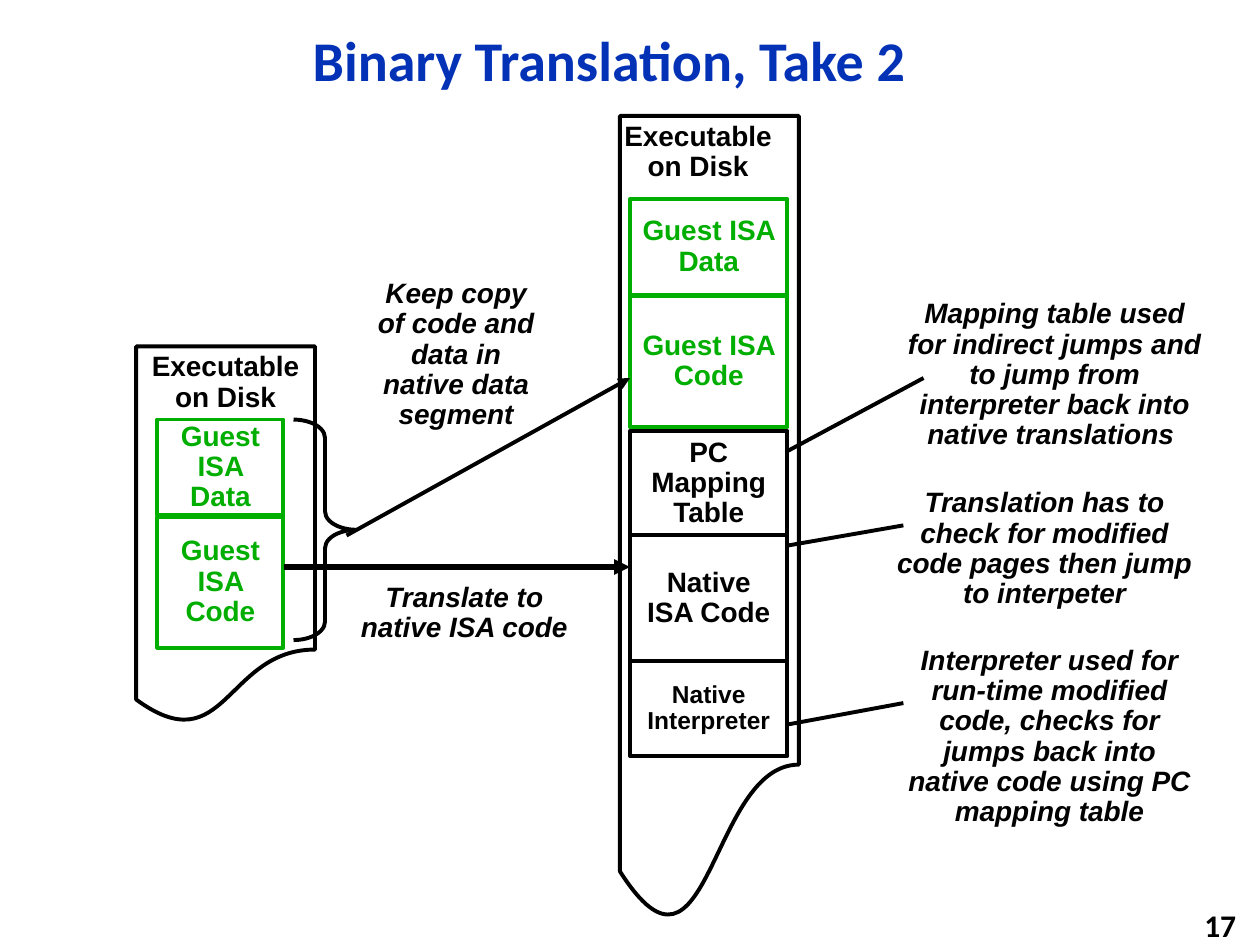
from dataclasses import dataclass

from lxml import etree
from pptx import Presentation
from pptx.dml.color import RGBColor
from pptx.enum.shapes import MSO_CONNECTOR, MSO_SHAPE
from pptx.enum.text import MSO_ANCHOR, MSO_AUTO_SIZE, PP_ALIGN
from pptx.oxml.ns import qn
from pptx.util import Inches, Pt

RECTANGLE = MSO_SHAPE.RECTANGLE
DOCUMENT = MSO_SHAPE.FLOWCHART_DOCUMENT
BRACE = MSO_SHAPE.RIGHT_BRACE
STRAIGHT = MSO_CONNECTOR.STRAIGHT
MIDDLE, TOP = MSO_ANCHOR.MIDDLE, MSO_ANCHOR.TOP
CENTER, RIGHT = PP_ALIGN.CENTER, PP_ALIGN.RIGHT
NO_AUTOFIT = MSO_AUTO_SIZE.NONE
TITLE_ONLY = 5


@dataclass(frozen=True)
class Theme:
    title: RGBColor = RGBColor(0x03, 0x32, 0xB7)
    guest: RGBColor = RGBColor(0x00, 0xAE, 0x00)
    ink: RGBColor = RGBColor(0, 0, 0)
    heading_font: str = "Calibri"
    body_font: str = "Arial"
    title_size: int = 32
    number_size: int = 18
    body_size: int = 16
    small_size: int = 14
    line_width: float = 2.25
    thick_width: float = 3
    box_inset: float = 0.09


THEME = Theme()


def write(shape, text, color=THEME.ink, size=THEME.body_size, font=THEME.body_font,
          align=CENTER, anchor=TOP, italic=False, spacing=0.9):
    frame = shape.text_frame
    frame.word_wrap = True
    frame.auto_size = NO_AUTOFIT
    frame.vertical_anchor = anchor
    paragraph = frame.paragraphs[0]
    paragraph.alignment = align
    paragraph.line_spacing = spacing
    run = paragraph.add_run()
    run.text = text
    run.font.name = font
    run.font.size = Pt(size)
    run.font.bold = True
    run.font.italic = italic
    run.font.color.rgb = color


def add_outline(slide, kind, left, top, width, height, color=THEME.ink):
    shape = slide.shapes.add_shape(kind, Inches(left), Inches(top), Inches(width), Inches(height))
    shape.shadow.inherit = False
    shape.fill.background()
    shape.line.color.rgb = color
    shape.line.width = Pt(THEME.line_width)
    return shape


def add_section(slide, left, top, width, height, text, color=THEME.ink, size=THEME.body_size):
    shape = add_outline(slide, RECTANGLE, left, top, width, height, color)
    shape.text_frame.margin_left = shape.text_frame.margin_right = Inches(THEME.box_inset)
    write(shape, text, color, size, anchor=MIDDLE)


def add_guest_sections(slide, left, top, width):
    add_section(slide, left, top + 0.77, width, 1.04, "Guest ISA Code", THEME.guest)
    add_section(slide, left, top, width, 0.76, "Guest ISA Data", THEME.guest)


def add_text(slide, left, top, width, height, text, **style):
    box = slide.shapes.add_textbox(Inches(left), Inches(top), Inches(width), Inches(height))
    write(box, text, **style)


def add_executable(slide, left, top, height, label_left):
    width = 1.42
    add_outline(slide, DOCUMENT, left, top, width, height)
    add_text(slide, label_left, top, width, 0.58, "Executable on Disk")


def add_line(slide, start, end, width=THEME.line_width, arrow=False):
    line = slide.shapes.add_connector(STRAIGHT, *(Inches(value) for value in start + end))
    line.line.color.rgb = THEME.ink
    line.line.width = Pt(width)
    if arrow:
        etree.SubElement(line.line._get_or_add_ln(), qn("a:tailEnd"), type="triangle")
    etree.SubElement(line._element.spPr, qn("a:effectLst"))


def add_title(slide, text):
    title = slide.shapes.title
    title.left, title.top = Inches(0.92), Inches(0)
    title.width, title.height = Inches(7.83), Inches(1)
    write(title, text, THEME.title, THEME.title_size, THEME.heading_font, anchor=MIDDLE)


def add_guest_executable(slide):
    add_guest_sections(slide, 1.25, 3.33, 1)
    add_executable(slide, 1.08, 2.75, 3, label_left=1.08)


def add_translated_executable(slide):
    left, width = 5, 1.25
    add_executable(slide, 4.92, 0.92, 6.42, label_left=4.83)
    add_guest_sections(slide, left, 1.58, width)
    top = 3.42
    for text, height, size in (
        ("PC Mapping Table", 0.83, THEME.body_size),
        ("Native ISA Code", 1, THEME.body_size),
        ("Native Interpreter", 0.75, THEME.small_size),
    ):
        add_section(slide, left, top, width, height, text, size=size)
        top += height


def add_translation_steps(slide):
    add_line(slide, (2.25, 4.5), (5, 4.5), THEME.thick_width, arrow=True)
    add_line(slide, (2.75, 4.25), (5, 3), arrow=True)
    brace = add_outline(slide, BRACE, 2.33, 3.33, 0.5, 1.75)
    brace.adjustments[0] = 0.292
    brace.adjustments[1] = 0.5
    add_text(slide, 2.67, 4.58, 2.03, 0.58, "Translate to native ISA code", italic=True)
    add_text(slide, 2.83, 2.17, 1.58, 1.31,
             "Keep copy of code and data in native data segment", italic=True)


def add_callouts(slide):
    for bounds, text, start, end in (
        ((7.08, 2.33, 2.58, 1.31),
         "Mapping table used for indirect jumps and to jump from interpreter "
         "back into native translations ", (6.25, 3.58), (7.33, 3)),
        ((7, 3.83, 2.58, 1.07),
         "Translation has to check for modified code pages then jump to interpeter",
         (6.25, 4.33), (7.17, 4.17)),
        ((7.08, 5.08, 2.5, 1.55),
         "Interpreter used for run-time modified code, checks for jumps back into "
         "native code using PC mapping table", (6.25, 5.75), (7.17, 5.58)),
    ):
        add_text(slide, *bounds, text, italic=True)
        add_line(slide, start, end)


def main():
    presentation = Presentation()
    presentation.slide_width, presentation.slide_height = Inches(10), Inches(7.5)
    slide = presentation.slides.add_slide(presentation.slide_layouts[TITLE_ONLY])
    add_title(slide, "Binary Translation, Take 2")
    add_text(slide, 7.83, 7.18, 2.08, 0.32, "17", size=THEME.number_size,
             font=THEME.heading_font, align=RIGHT, anchor=MIDDLE, spacing=1.0)
    add_guest_executable(slide)
    add_translated_executable(slide)
    add_translation_steps(slide)
    add_callouts(slide)
    presentation.save("out.pptx")


if __name__ == "__main__":
    main()
